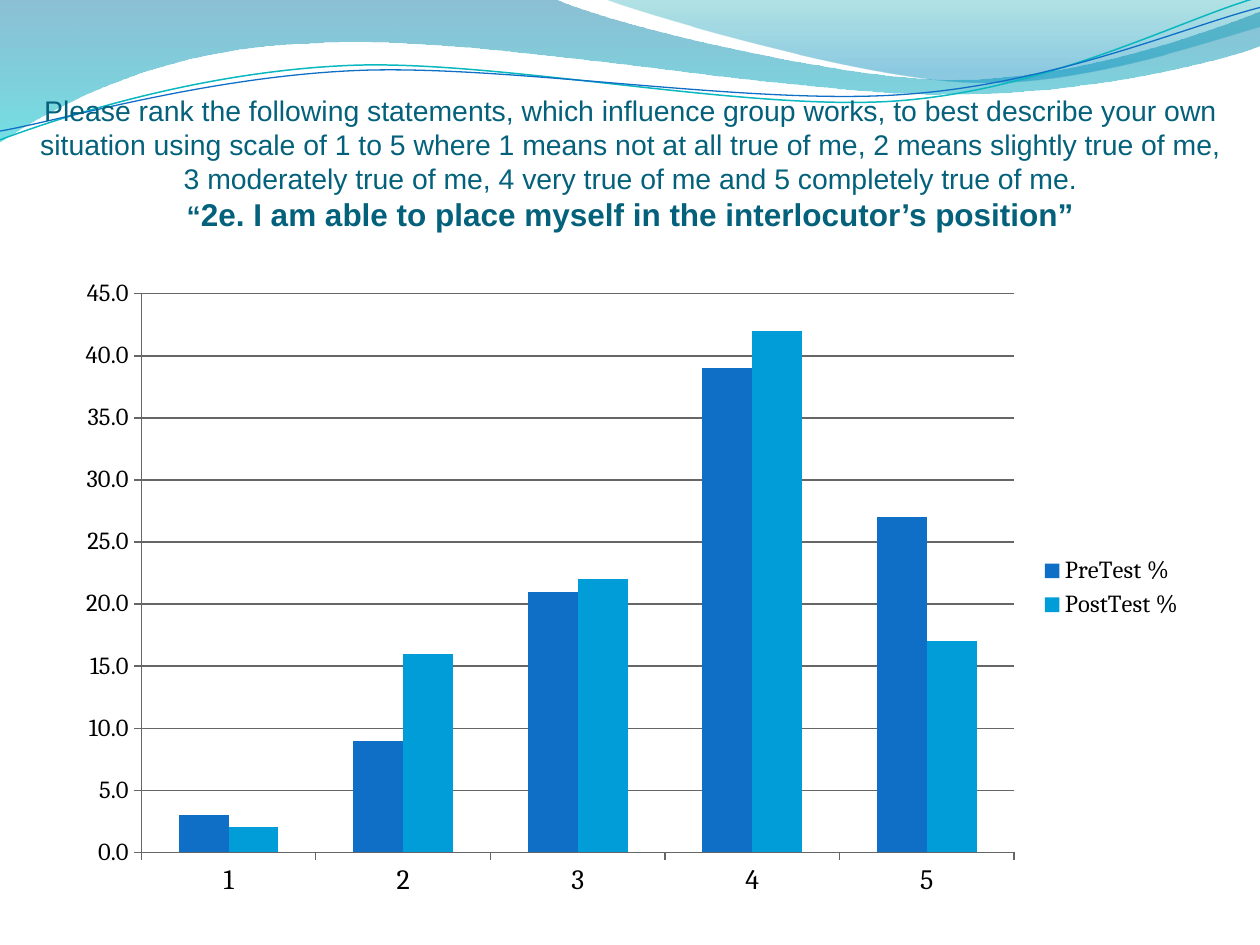
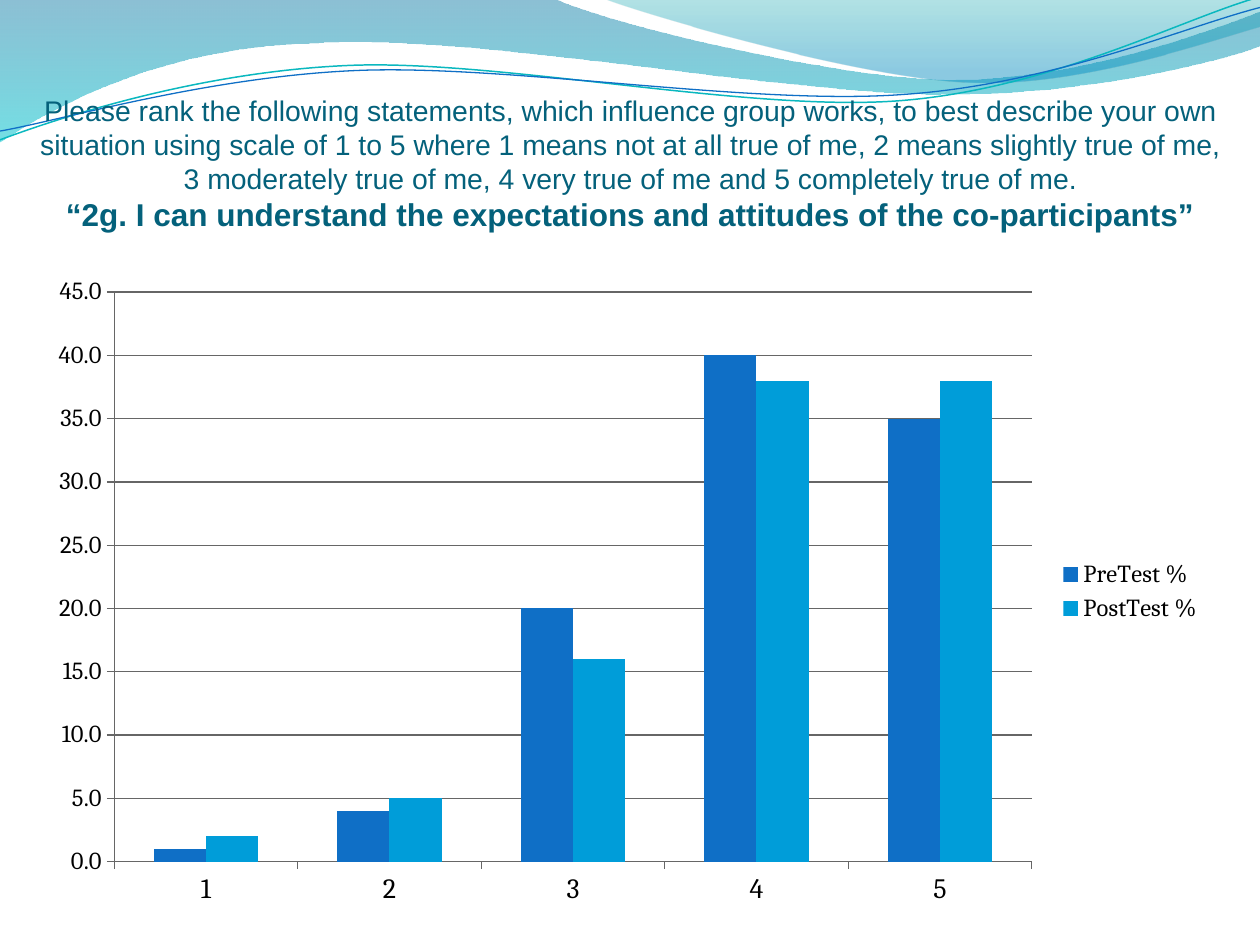
from dataclasses import dataclass
from math import cos, radians, sin

from lxml import etree
from pptx import Presentation
from pptx.chart.data import CategoryChartData
from pptx.dml.color import RGBColor as RGB
from pptx.enum.chart import XL_CHART_TYPE as ChartType, XL_LEGEND_POSITION as LegendPos
from pptx.enum.text import MSO_ANCHOR as Anchor, PP_ALIGN as Align
from pptx.oxml.ns import qn
from pptx.util import Pt


@dataclass(frozen=True)
class Theme:
    """Colours, fonts and type sizes."""
    title: str = "04617B"
    ink: str = "000000"
    grid: str = "666666"
    blue: str = "0F6FC6"
    teal: str = "0AB8BF"
    series: tuple = ("0F6FC6", "009DD9")
    band: tuple = ((0, "0074A1", 45), (1, "00C6CF", 55))
    corner: tuple = ((0, "00A1A9", 30), (0.8, "008BBF", 45))
    title_font: str = "Arial"
    chart_font: str = "Cambria"
    lead_size: float = 16.2
    statement_size: float = 18
    category_size: float = 16
    label_size: float = 14
    base_size: float = 10


BAND = [
    (0, 0), (316.8, -0.7),
    (342.7, 12.2, 478.1, 45.4, 545.8, 45.4), (614.2, 45.4, 689.8, 18.7, 720, 6.5),
    (720.7, 25.9),
    (707.8, 31.7, 626.4, 54.7, 537.1, 54), (447.8, 54, 275, 20.2, 185, 24.5),
    (92.9, 25.9, 33.1, 59.8, -0.7, 81.4), (0, 0),
]
CORNER = [
    (344.9, -0.7),
    (366.5, 7.9, 491, 44.6, 553.7, 46.8), (616.3, 49.7, 691.9, 23, 720, 15.1),
    (720, 0), (344.9, -0.7),
]
TEAL_WAVE = [
    (0, 79.9),
    (34.6, 67, 113.8, 41, 199.4, 37.4), (284.4, 33.8, 427, 64.1, 513.4, 57.6),
    (599.8, 51.1, 675.4, 10.8, 718.6, -1.4),
]
BLUE_WAVE = [
    (0, 74.9),
    (33.8, 69.1, 118.1, 43.9, 203.8, 40.3), (290.2, 36.7, 429.8, 60.5, 516.2, 54),
    (601.9, 48.2, 677.5, 15.1, 720, 4.3),
]
TILT = 2.7
LEAD = (
    "Please rank the following statements, which influence group works, to best "
    "describe your own situation using scale of 1 to 5 where 1 means not at all true "
    "of me, 2 means slightly true of me, 3 moderately true of me, 4 very true of me "
    "and 5 completely true of me."
)
SCALE = ("1", "2", "3", "4", "5")
SURVEY = [
    {
        "statement": [("“", Theme.lead_size),
                      ("2e. I am able to place myself in the interlocutor’s position”",
                       Theme.statement_size)],
        "box": (36, 152.3, 648, 367.2),
        "results": {"PreTest %": (3, 9, 21, 39, 27),
                    "PostTest %": (2, 16, 22, 42, 17)},
    },
    {
        "statement": [("“2g. I can understand the expectations and attitudes of the "
                       "co-participants”", Theme.statement_size)],
        "box": (20, 151.2, 674.6, 373.7),
        "results": {"PreTest %": (1, 4, 20, 40, 35),
                    "PostTest %": (2, 5, 16, 38, 38)},
    },
]


def turn(path, center, degrees):
    """Rotate every point of a path clockwise about a center."""
    (cx, cy), c, s = center, cos(radians(degrees)), sin(radians(degrees))
    turned = []
    for seg in path:
        pairs = [(x - cx, y - cy) for x, y in zip(seg[::2], seg[1::2])]
        turned.append([v for x, y in pairs
                       for v in (cx + x * c - y * s, cy + x * s + y * c)])
    return turned


class Deck:
    """Holds the theme and the current slide and draws each kind of element."""

    def __init__(self, prs, theme):
        """Keep the presentation and its theme."""
        self.prs, self.theme, self.slide = prs, theme, None

    def new_slide(self):
        """Add a blank slide with the waves along its top."""
        self.slide = self.prs.slides.add_slide(self.prs.slide_layouts[6])
        self.gradient(BAND, self.theme.band)
        self.gradient(CORNER, self.theme.corner)
        self.wave(TEAL_WAVE, (359.3, 41.4), self.theme.teal, 0.85)
        self.wave(BLUE_WAVE, (359.6, 42.5), self.theme.blue, 0.75)

    def outline(self, path, close=False):
        """Build a freeform of lines and Bézier curves from a path in points."""
        first, *rest = [(Pt(x), Pt(y)) for seg in path
                        for x, y in zip(seg[::2], seg[1::2])]
        builder = self.slide.shapes.build_freeform(*first)
        builder.add_line_segments(rest, close=close)
        sp = builder.convert_to_shape()
        sp.shadow.inherit = False
        lines = iter(list(sp.element.spPr.iter(qn("a:lnTo"))))
        for seg in path[1:]:
            line = next(lines)
            if len(seg) == 6:
                line.addprevious(curve := etree.Element(qn("a:cubicBezTo")))
                for part in (line, next(lines), next(lines)):
                    curve.append(part[0])
                    part.getparent().remove(part)
        return sp

    def gradient(self, path, stops):
        """Draw a closed outline with a translucent downward gradient."""
        sp = self.outline(path, close=True)
        sp.line.fill.background()
        sp.fill.gradient()
        sp.fill.gradient_angle = 270
        for stop, (position, color, _) in zip(sp.fill.gradient_stops, stops):
            stop.position = position
            stop.color.rgb = RGB.from_string(color)
        colors = sp.element.spPr.iter(qn("a:srgbClr"))
        for clr, (_, _, alpha) in zip(colors, stops):
            etree.SubElement(clr, qn("a:alpha"), val=str(alpha * 1000))

    def wave(self, path, center, color, width):
        """Draw an open curved line in a tilted frame."""
        sp = self.outline(turn(path, center, TILT))
        sp.rotation = 360 - TILT
        sp.fill.background()
        sp.line.color.rgb = RGB.from_string(color)
        sp.line.width = Pt(width)

    def title(self, lead, statement):
        """Write the question with its bold statement below."""
        th = self.theme
        tf = self.slide.shapes.add_textbox(Pt(20), Pt(43.2), Pt(680.4), Pt(90)).text_frame
        tf.word_wrap = True
        tf.vertical_anchor = Anchor.BOTTOM
        tf.margin_left = tf.margin_right = tf.margin_bottom = 0
        tf.margin_top = Pt(3.6)
        p = tf.paragraphs[0]
        p.alignment = Align.CENTER
        p.font.name = th.title_font
        p.font.size = Pt(th.lead_size)
        p.font.color.rgb = RGB.from_string(th.title)
        p.add_run().text = lead
        p.add_line_break()
        for text, size in statement:
            r = p.add_run()
            r.text = text
            r.font.bold = True
            r.font.size = Pt(size)

    def chart(self, box, categories, results):
        """Draw the clustered columns of the results."""
        th = self.theme
        data = CategoryChartData(number_format="0.0")
        data.categories = categories
        for name, values in results.items():
            data.add_series(name, values)
        chart = self.slide.shapes.add_chart(
            ChartType.COLUMN_CLUSTERED, *map(Pt, box), data).chart
        chart.has_title = False
        chart.font.name = th.chart_font
        chart.font.size = Pt(th.base_size)
        chart.font.color.rgb = RGB.from_string(th.ink)
        chart.has_legend = True
        chart.legend.position = LegendPos.RIGHT
        chart.legend.include_in_layout = False
        chart.legend.font.size = Pt(th.label_size)
        plot = chart.plots[0]
        plot.gap_width, plot.overlap = 150, 0
        plot.vary_by_categories = False
        for series, color in zip(plot.series, th.series):
            series.format.fill.solid()
            series.format.fill.fore_color.rgb = RGB.from_string(color)
        value, category = chart.value_axis, chart.category_axis
        value.minimum_scale, value.maximum_scale, value.major_unit = 0, 45, 5
        value.tick_labels.number_format = "0.0"
        value.tick_labels.number_format_is_linked = False
        value.tick_labels.font.size = Pt(th.label_size)
        category.tick_labels.font.size = Pt(th.category_size)
        for part in (value, category, value.major_gridlines):
            part.format.line.color.rgb = RGB.from_string(th.grid)
            part.format.line.width = Pt(0.75)


def main():
    """Build and save the survey slides."""
    prs = Presentation()
    prs.slide_width, prs.slide_height = Pt(720), Pt(540)
    deck = Deck(prs, Theme())
    for question in SURVEY:
        deck.new_slide()
        deck.title(LEAD, question["statement"])
        deck.chart(question["box"], SCALE, question["results"])
    prs.save("out.pptx")


if __name__ == "__main__":
    main()
